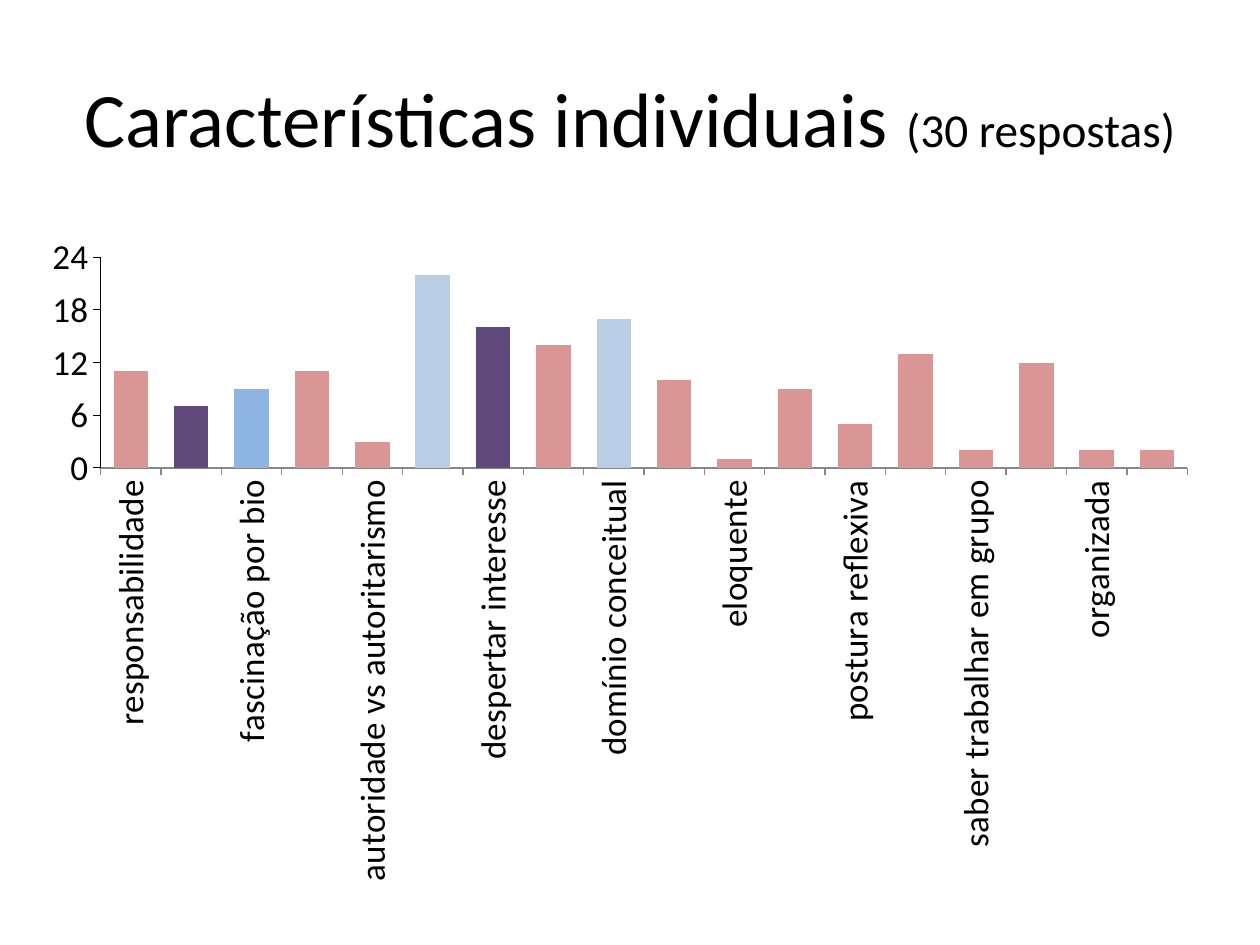
from pptx import Presentation
from pptx.chart.data import CategoryChartData
from pptx.dml.color import RGBColor
from pptx.enum.chart import XL_CHART_TYPE as ChartType, XL_TICK_MARK as Tick
from pptx.enum.text import MSO_ANCHOR as Anchor, PP_ALIGN as Align
from pptx.oxml import parse_xml
from pptx.oxml.ns import nsdecls, qn
from pptx.util import Cm, Pt

BLACK = RGBColor(0x00, 0x00, 0x00)
GRAY = RGBColor(0x87, 0x87, 0x87)
ROSE = RGBColor(0xD9, 0x96, 0x94)
PURPLE = RGBColor(0x60, 0x4A, 0x7B)
BLUE = RGBColor(0x8E, 0xB4, 0xE3)
PALE_BLUE = RGBColor(0xB9, 0xCD, 0xE5)

TRAITS = [
    ("responsabilidade", 11, ROSE),
    ("integrar conceitos", 7, PURPLE),
    ("fascinação por bio", 9, BLUE),
    ("paciência", 11, ROSE),
    ("autoridade vs autoritarismo", 3, ROSE),
    ("diferentes recursos", 22, PALE_BLUE),
    ("despertar interesse", 16, PURPLE),
    ("local de formação", 14, ROSE),
    ("domínio conceitual", 17, PALE_BLUE),
    ("disposição", 10, ROSE),
    ("eloquente", 1, ROSE),
    ("atualizado", 9, ROSE),
    ("postura reflexiva", 5, ROSE),
    ("tempo de experiência", 13, ROSE),
    ("saber trabalhar em grupo", 2, ROSE),
    ("educação fundamental ao cidadão", 12, ROSE),
    ("organizada", 2, ROSE),
    ("vestibular", 2, ROSE),
]


class SlideBuilder:
    font = "Calibri"
    axis_size = Pt(20)

    def __init__(self, prs):
        self.slide = prs.slides.add_slide(prs.slide_layouts[6])

    def title(self, box, runs):
        tf = self.slide.shapes.add_textbox(*box).text_frame
        tf.word_wrap = True
        tf.vertical_anchor = Anchor.MIDDLE
        p = tf.paragraphs[0]
        p.alignment = Align.CENTER
        for text, size in runs:
            r = p.add_run()
            r.text = text
            r.font.name = self.font
            r.font.size = Pt(size)
            r.font.color.rgb = BLACK

    def column_chart(self, box, rows):
        data = CategoryChartData()
        data.categories = [name for name, _, _ in rows]
        data.add_series("Series 1", [value for _, value, _ in rows])
        chart = self.slide.shapes.add_chart(
            ChartType.COLUMN_CLUSTERED, *box, data).chart
        chart.has_legend = False
        chart.has_title = False
        chart.font.name = self.font
        chart.font.size = Pt(10)
        chart.font.color.rgb = BLACK

        plot = chart.plots[0]
        plot.gap_width = 75
        plot.overlap = 80
        plot.vary_by_categories = False
        series = plot.series[0]
        series.invert_if_negative = False
        self.fill(series, ROSE)
        for i, (_, _, color) in enumerate(rows):
            if color != ROSE:
                self.fill(series.points[i], color)

        self.axis(chart.category_axis, GRAY, 0.75)
        self.axis(chart.value_axis, BLACK, 0.5)
        chart.value_axis.minimum_scale = 0
        chart.value_axis.maximum_scale = 24
        chart.value_axis.major_unit = 6
        self.vertical_labels(chart.category_axis, 2)

    def fill(self, item, color):
        item.format.fill.solid()
        item.format.fill.fore_color.rgb = color

    def axis(self, axis, color, width):
        axis.has_major_gridlines = False
        axis.major_tick_mark = Tick.OUTSIDE
        axis.minor_tick_mark = Tick.NONE
        font = axis.tick_labels.font
        font.name = self.font
        font.size = self.axis_size
        font.color.rgb = BLACK
        axis.format.line.color.rgb = color
        axis.format.line.width = Pt(width)

    def vertical_labels(self, axis, step):
        ax = axis._element
        body = ax.find(qn("c:txPr")).find(qn("a:bodyPr"))
        body.set("rot", "-5400000")
        body.set("vert", "horz")
        skip = parse_xml(f'<c:tickLblSkip {nsdecls("c")} val="{step}"/>')
        ax.find(qn("c:noMultiLvlLbl")).addprevious(skip)


def main():
    prs = Presentation()
    prs.slide_width = Cm(25.4)
    prs.slide_height = Cm(19.05)
    builder = SlideBuilder(prs)
    builder.title(
        (Cm(1.27), Cm(0.76), Cm(22.86), Cm(3.18)),
        [("Características individuais ", 44), ("(30 respostas)", 27)])
    builder.column_chart((Cm(0.58), Cm(4.75), Cm(23.83), Cm(13.28)), TRAITS)
    prs.save("out.pptx")


if __name__ == "__main__":
    main()
